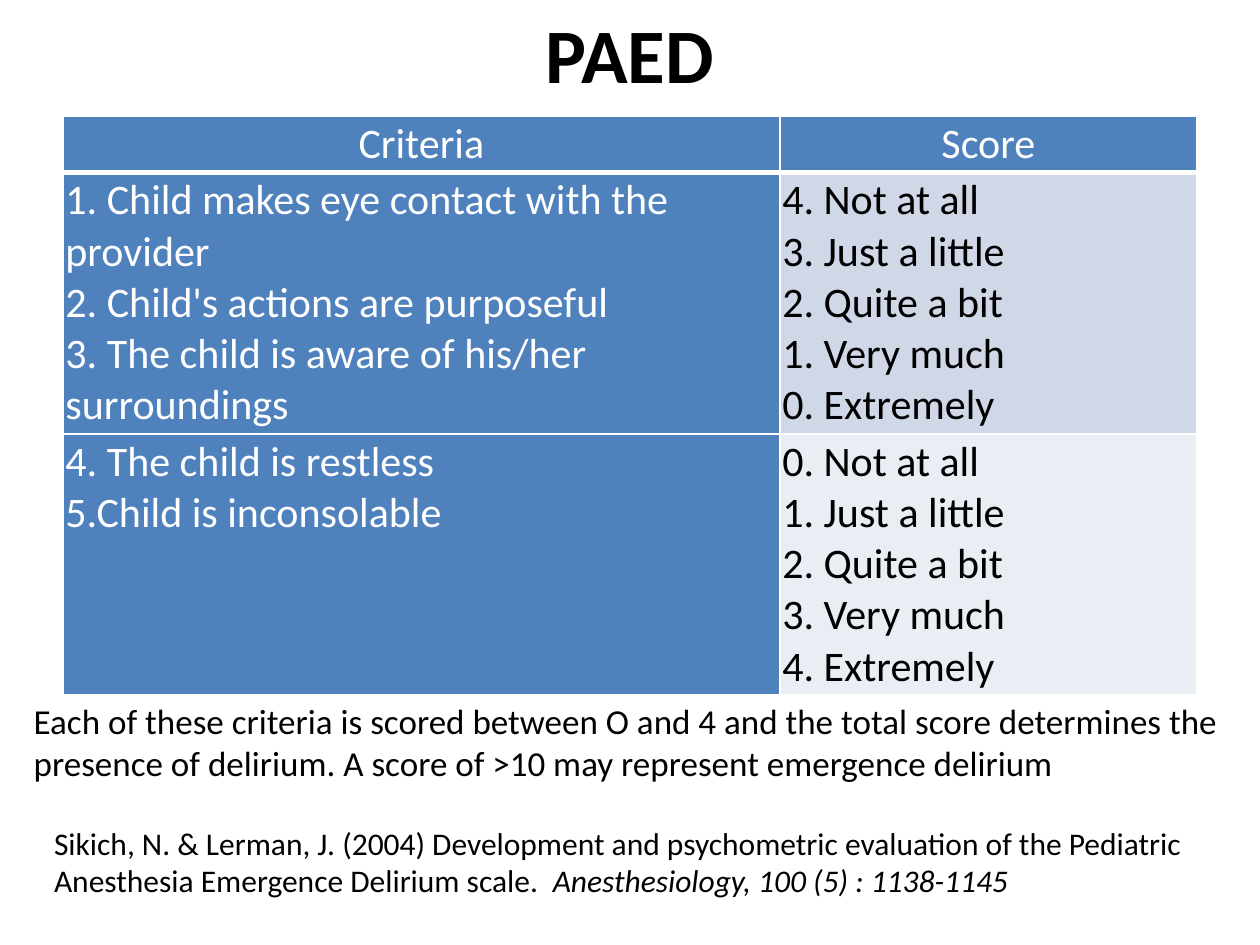
import pptx
import pptx.dml.color
import pptx.enum.text
import pptx.oxml
import pptx.oxml.ns
import pptx.util
from pptx.dml.color import RGBColor
from pptx.util import Cm

WHITE = RGBColor(0xFF, 0xFF, 0xFF)
BLACK = RGBColor(0x00, 0x00, 0x00)
BLUE = RGBColor(0x4F, 0x81, 0xBD)
BAND_DARK = RGBColor(0xD0, 0xD8, 0xE8)
BAND_LIGHT = RGBColor(0xE9, 0xED, 0xF4)

CENTER = pptx.enum.text.PP_ALIGN.CENTER
LEFT = pptx.enum.text.PP_ALIGN.LEFT
MIDDLE = pptx.enum.text.MSO_ANCHOR.MIDDLE
TOP = pptx.enum.text.MSO_ANCHOR.TOP


class SlideBuilder:
    font_name = "Calibri"
    cell_size = 24
    cell_margin = Cm(0.05)

    def __init__(self, slide):
        self.slide = slide

    def style(self, paragraph, size, color=BLACK, bold=False, align=LEFT):
        paragraph.alignment = align
        font = paragraph.font
        font.name = self.font_name
        font.size = pptx.util.Pt(size)
        font.bold = bold
        font.color.rgb = color

    def text(self, box, words, size, bold=False, align=LEFT, anchor=TOP, italic_end=""):
        frame = self.slide.shapes.add_textbox(*map(Cm, box)).text_frame
        frame.word_wrap = True
        frame.vertical_anchor = anchor
        paragraph = frame.paragraphs[0]
        paragraph.add_run().text = words
        if italic_end:
            ending = paragraph.add_run()
            ending.text = italic_end
            ending.font.italic = True
        self.style(paragraph, size, bold=bold, align=align)

    def border(self, cell, side, points):
        """Draw one white cell edge; side is L, R, T or B."""
        cell._tc.get_or_add_tcPr().append(pptx.oxml.parse_xml(
            f'<a:ln{side} {pptx.oxml.ns.nsdecls("a")} w="{pptx.util.Pt(points)}">'
            f'<a:solidFill><a:srgbClr val="{WHITE}"/></a:solidFill></a:ln{side}>'))

    def cell(self, cell, words, fill, color, align, bottom):
        cell.margin_left = cell.margin_right = self.cell_margin
        cell.margin_top = cell.margin_bottom = self.cell_margin
        # Edges come before the fill in the cell properties
        for side, points in zip("LRTB", (1, 1, 1, bottom)):
            self.border(cell, side, points)
        cell.fill.solid()
        cell.fill.fore_color.rgb = fill
        paragraph = cell.text_frame.paragraphs[0]
        paragraph.text = "\v".join(words)
        self.style(paragraph, self.cell_size, color, align=align)

    def table(self, box, widths, heights, rows):
        table = self.slide.shapes.add_table(
            len(heights), len(widths), *map(Cm, box)).table
        table.first_row = table.horz_banding = False
        for column, width in zip(table.columns, widths):
            column.width = Cm(width)
        for row, height in zip(table.rows, heights):
            row.height = Cm(height)
        for r, (criteria, scores, band) in enumerate(rows):
            header = r == 0
            align, bottom = (CENTER, 3) if header else (LEFT, 1)
            self.cell(table.cell(r, 0), criteria, BLUE, WHITE, align, bottom)
            self.cell(table.cell(r, 1), scores, band,
                      WHITE if header else BLACK, align, bottom)


def main():
    deck = pptx.Presentation()
    deck.slide_width, deck.slide_height = Cm(25.4), Cm(19.05)
    builder = SlideBuilder(deck.slides.add_slide(deck.slide_layouts[6]))

    # Criteria and their scores; the second group is scored in reverse
    levels = ["Not at all", "Just a little", "Quite a bit", "Very much", "Extremely"]
    falling = [f"{4 - i}. {level}" for i, level in enumerate(levels)]
    rising = [f"{i}. {level}" for i, level in enumerate(levels)]
    builder.table(
        (1.27, 2.34, 22.86, 11.5), (14.45, 8.41), (1.14, 5.03, 5.03),
        [(["Criteria"], ["Score"], BLUE),
         (["1. Child makes eye contact with the provider",
           "2. Child's actions are purposeful",
           "3. The child is aware of his/her surroundings"], falling, BAND_DARK),
         (["4. The child is restless", "5.Child is inconsolable"], rising, BAND_LIGHT)])

    # Interpretation
    builder.text(
        (0.43, 13.97, 24.56, 2.82),
        "Each of these criteria is scored between O and 4 and the total score "
        "determines the presence of delirium. A score of >10 may represent "
        "emergence delirium", 20)

    # Citation
    builder.text(
        (0.84, 16.48, 23.29, 2.57),
        "Sikich, N. & Lerman, J. (2004) Development and psychometric evaluation "
        "of the Pediatric Anesthesia Emergence Delirium scale.  ", 18,
        italic_end="Anesthesiology, 100 (5) : 1138-1145")

    # Title
    builder.text((1.27, 0, 22.86, 2.11), "PAED", 44, bold=True,
                 align=CENTER, anchor=MIDDLE)

    deck.save("out.pptx")


if __name__ == "__main__":
    main()
